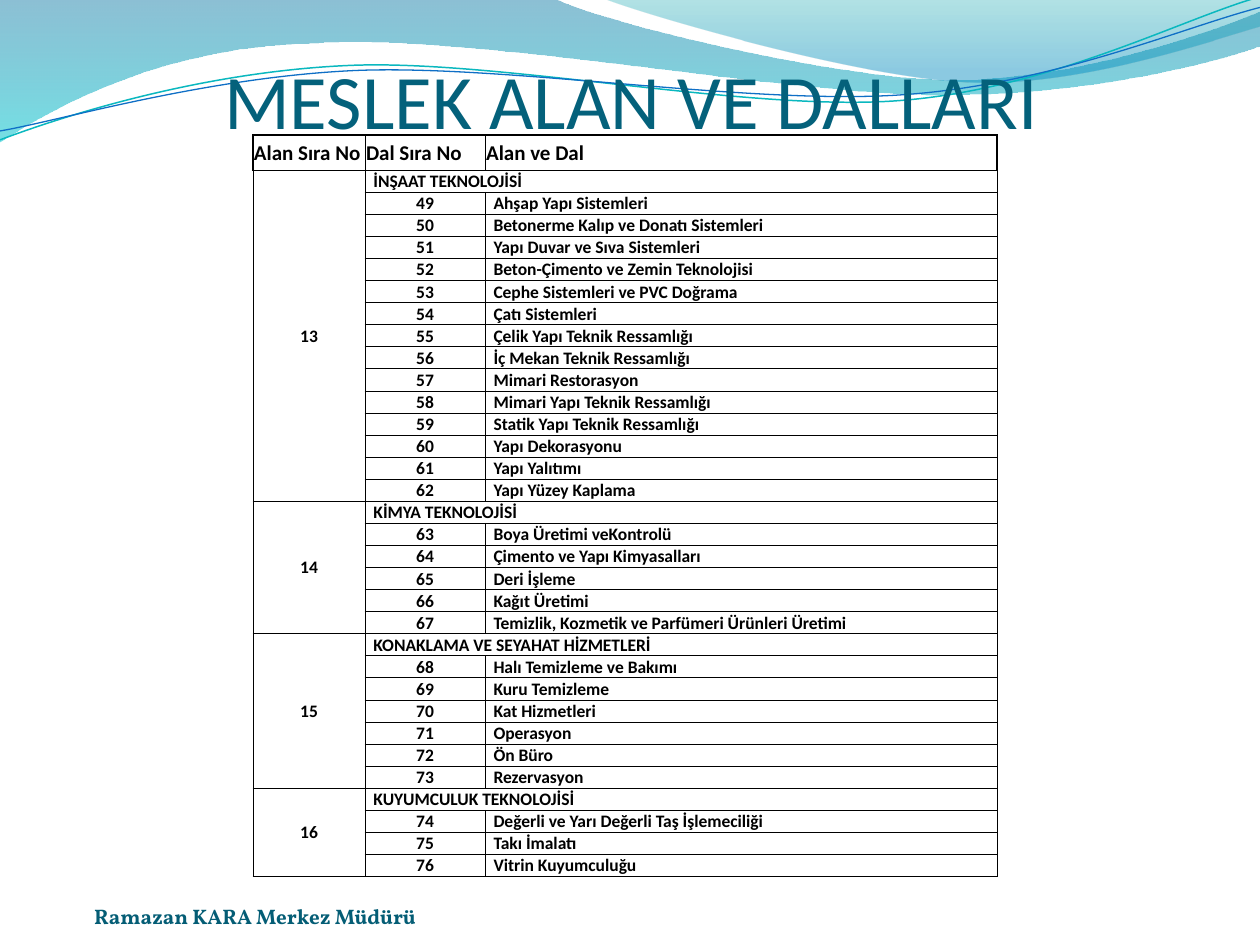
from math import cos, radians, sin

from lxml import etree
from pptx import Presentation
from pptx.dml.color import RGBColor
from pptx.enum.text import MSO_ANCHOR as Anchor, PP_ALIGN as Align
from pptx.oxml.ns import qn
from pptx.util import Cm, Pt

BLACK = "000000"
HEADINGS = ["Alan Sıra No", "Dal Sıra No", "Alan ve Dal"]
FIRST_FIELD, FIRST_BRANCH = 13, 49
FIELDS = {
    "İNŞAAT TEKNOLOJİSİ": [
        "Ahşap Yapı Sistemleri", "Betonerme Kalıp ve Donatı Sistemleri",
        "Yapı Duvar ve Sıva Sistemleri", "Beton-Çimento ve Zemin Teknolojisi",
        "Cephe Sistemleri ve PVC Doğrama", "Çatı Sistemleri",
        "Çelik Yapı Teknik Ressamlığı", "İç Mekan Teknik Ressamlığı",
        "Mimari Restorasyon", "Mimari Yapı Teknik Ressamlığı",
        "Statik Yapı Teknik Ressamlığı", "Yapı Dekorasyonu",
        "Yapı Yalıtımı", "Yapı Yüzey Kaplama"],
    "KİMYA TEKNOLOJİSİ": [
        "Boya Üretimi veKontrolü", "Çimento ve Yapı Kimyasalları",
        "Deri İşleme", "Kağıt Üretimi",
        "Temizlik, Kozmetik ve Parfümeri Ürünleri Üretimi"],
    "KONAKLAMA VE SEYAHAT HİZMETLERİ": [
        "Halı Temizleme ve Bakımı", "Kuru Temizleme", "Kat Hizmetleri",
        "Operasyon", "Ön Büro", "Rezervasyon"],
    "KUYUMCULUK TEKNOLOJİSİ": [
        "Değerli ve Yarı Değerli Taş İşlemeciliği", "Takı İmalatı",
        "Vitrin Kuyumculuğu"],
}

# Waves in cm: a pair is a straight step, six numbers are a Bézier step
BAND = [(0, 0), (11.18, -0.03), (12.09, 0.43, 16.87, 1.6, 19.25, 1.6),
        (21.67, 1.6, 24.33, 0.66, 25.4, 0.23), (25.43, 0.91),
        (24.97, 1.12, 22.1, 1.93, 18.95, 1.91),
        (15.8, 1.91, 9.7, 0.71, 6.53, 0.86),
        (3.28, 0.91, 1.17, 2.11, -0.03, 2.87)]
CREST = [(12.17, -0.03), (12.93, 0.28, 17.32, 1.57, 19.53, 1.65),
         (21.74, 1.75, 24.41, 0.81, 25.4, 0.53), (25.4, 0)]
TEAL_LINE = [(0, 2.82), (1.22, 2.36, 4.01, 1.45, 7.04, 1.32),
             (10.03, 1.19, 15.06, 2.26, 18.11, 2.03),
             (21.16, 1.8, 23.83, 0.38, 25.35, -0.05)]
BLUE_LINE = [(0, 2.64), (1.19, 2.44, 4.17, 1.55, 7.19, 1.42),
             (10.24, 1.3, 15.16, 2.13, 18.21, 1.91),
             (21.23, 1.7, 23.9, 0.53, 25.4, 0.15)]
LINE_TILT = -2.7
LINE_CENTER = (12.68, 1.48)


def rgb(color):
    return RGBColor.from_string(color)


def format_text(text_frame, font, size, color, bold=False, align=Align.LEFT):
    for paragraph in text_frame.paragraphs:
        paragraph.alignment = align
        for run in paragraph.runs:
            run.font.name, run.font.size, run.font.bold = font, Pt(size), bold
            run.font.color.rgb = rgb(color)


def level_point(x, y, tilt):
    """Turn a point back by the tilt that the shape's rotation will add."""
    angle = radians(-tilt)
    dx, dy = x - LINE_CENTER[0], y - LINE_CENTER[1]
    return (LINE_CENTER[0] + dx * cos(angle) - dy * sin(angle),
            LINE_CENTER[1] + dx * sin(angle) + dy * cos(angle))


def add_wave(slide, left, top, steps, closed, tilt=0):
    points = [level_point(*step[i:i + 2], tilt) for step in steps for i in range(0, len(step), 2)]
    points = [(Cm(left + x), Cm(top + y)) for x, y in points]
    builder = slide.shapes.build_freeform(*points[0])
    builder.add_line_segments(points[1:], close=closed)
    shape = builder.convert_to_shape()
    shape.shadow.inherit = False
    shape.rotation = tilt

    # Join each three points of a Bézier step into one curve
    segments = iter(list(shape._element.iter(qn("a:lnTo"))))
    for step in steps[1:]:
        segment = next(segments)
        if len(step) == 6:
            segment.tag = qn("a:cubicBezTo")
            for _ in range(2):
                extra = next(segments)
                segment.append(extra[0])
                extra.getparent().remove(extra)
    return shape


def add_header_waves(slide, left, top):
    # Translucent gradient bands: (position, colour, opacity in percent)
    for steps, stops in [
            (BAND, [(0, "0074A1", 45), (1, "00C6CF", 55)]),
            (CREST, [(0, "00A1A9", 30), (0.8, "008BBF", 45)])]:
        shape = add_wave(slide, left, top, steps, True)
        shape.line.fill.background()
        shape.fill.gradient()
        shape.fill.gradient_angle = 270
        for stop, (position, color, _) in zip(shape.fill.gradient_stops, stops):
            stop.position = position
            stop.color.rgb = rgb(color)
        gradient = shape._element.spPr.find(qn("a:gradFill"))
        for element, (_, _, opacity) in zip(gradient.iter(qn("a:srgbClr")), stops):
            etree.SubElement(element, qn("a:alpha"), val=str(opacity * 1000))
    # Thin tilted lines
    for steps, color, width in [(TEAL_LINE, "0AB8BF", 0.85), (BLUE_LINE, "0F6FC6", 0.75)]:
        shape = add_wave(slide, left, top, steps, False, LINE_TILT)
        shape.fill.background()
        shape.line.color.rgb = rgb(color)
        shape.line.width = Pt(width)


def add_label(slide, left, top, width, height, text, **style):
    box = slide.shapes.add_textbox(Cm(left), Cm(top), Cm(width), Cm(height))
    frame = box.text_frame
    frame.word_wrap = True
    frame.vertical_anchor = Anchor.BOTTOM
    frame.margin_left = frame.margin_right = frame.margin_top = frame.margin_bottom = 0
    frame.text = text
    format_text(frame, **style)


def set_borders(cell, widths):
    properties = cell._tc.get_or_add_tcPr()
    for side, width in zip("LRTB", widths):
        line = etree.SubElement(properties, qn(f"a:ln{side}"), w=str(Pt(width)))
        fill = etree.SubElement(line, qn("a:solidFill"))
        etree.SubElement(fill, qn("a:srgbClr"), val=BLACK)


def fill_cell(cell, text, size=10, align=Align.LEFT, anchor=Anchor.BOTTOM, indent=0.02):
    cell.text = str(text)
    cell.vertical_anchor = anchor
    cell.margin_left = Cm(indent)
    format_text(cell.text_frame, "Calibri", size, BLACK, True, align)


def add_branch_table(slide, left, top, column_widths, header_height, row_height):
    row_count = 1 + sum(1 + len(branches) for branches in FIELDS.values())
    table = slide.shapes.add_table(
        row_count, len(column_widths), Cm(left), Cm(top), Cm(sum(column_widths)),
        Cm(header_height + row_height * (row_count - 1))).table
    table.first_row = table.horz_banding = False
    for column, width in zip(table.columns, column_widths):
        column.width = Cm(width)
    last_column = len(column_widths) - 1

    # Grid: thin lines, with a heavier outline around the heading row
    for row_index, row in enumerate(table.rows):
        heading = row_index == 0
        row.height = Cm(header_height if heading else row_height)
        for column_index, cell in enumerate(row.cells):
            set_borders(cell, [1 if heading and column_index == 0 else 0.5,
                               1 if heading and column_index == last_column else 0.5,
                               1 if heading else 0.5, 0.5])
            cell.fill.background()
            cell.margin_left = cell.margin_right = Cm(0.02)
            cell.margin_top, cell.margin_bottom = Cm(0.02), 0

    for column_index, heading in enumerate(HEADINGS):
        fill_cell(table.cell(0, column_index), heading, 12, anchor=Anchor.MIDDLE)

    # One block of rows for each field
    row_index, branch_number = 1, FIRST_BRANCH
    for field_number, (field, branches) in enumerate(FIELDS.items(), FIRST_FIELD):
        number_cell, field_cell = table.cell(row_index, 0), table.cell(row_index, 1)
        number_cell.merge(table.cell(row_index + len(branches), 0))
        field_cell.merge(table.cell(row_index, last_column))
        fill_cell(number_cell, field_number, align=Align.CENTER, anchor=Anchor.MIDDLE)
        fill_cell(field_cell, field, indent=0.17)
        for offset, branch in enumerate(branches, 1):
            fill_cell(table.cell(row_index + offset, 1), branch_number, align=Align.CENTER)
            fill_cell(table.cell(row_index + offset, 2), branch, indent=0.17)
            branch_number += 1
        row_index += len(branches) + 1


def main():
    presentation = Presentation()
    presentation.slide_width, presentation.slide_height = Cm(25.4), Cm(19.05)
    slide = presentation.slides.add_slide(presentation.slide_layouts[6])
    add_header_waves(slide, 0, 0)
    # Title and footer
    add_label(slide, 1.3, 0.91, 22.86, 2.01, "MESLEK ALAN VE DALLARI",
              font="Calibri", size=44, color="04617B", align=Align.CENTER)
    add_label(slide, 1.9, 17.73, 7.32, 0.99, "Ramazan KARA Merkez Müdürü",
              font="Vollkorn", size=12, color="045D75", bold=True)
    add_branch_table(slide, 5.1, 2.72, [2.26, 2.42, 10.32], 0.71, 0.44)
    presentation.save("out.pptx")


if __name__ == "__main__":
    main()
